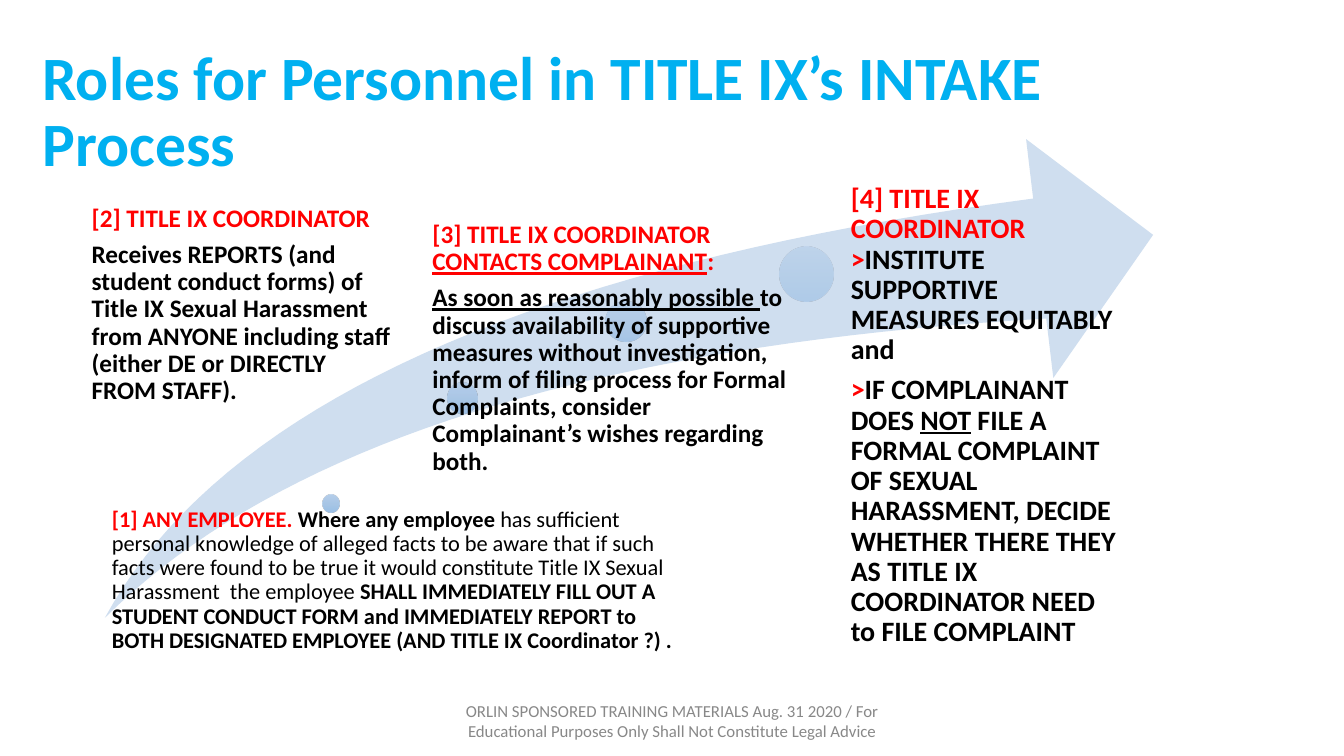
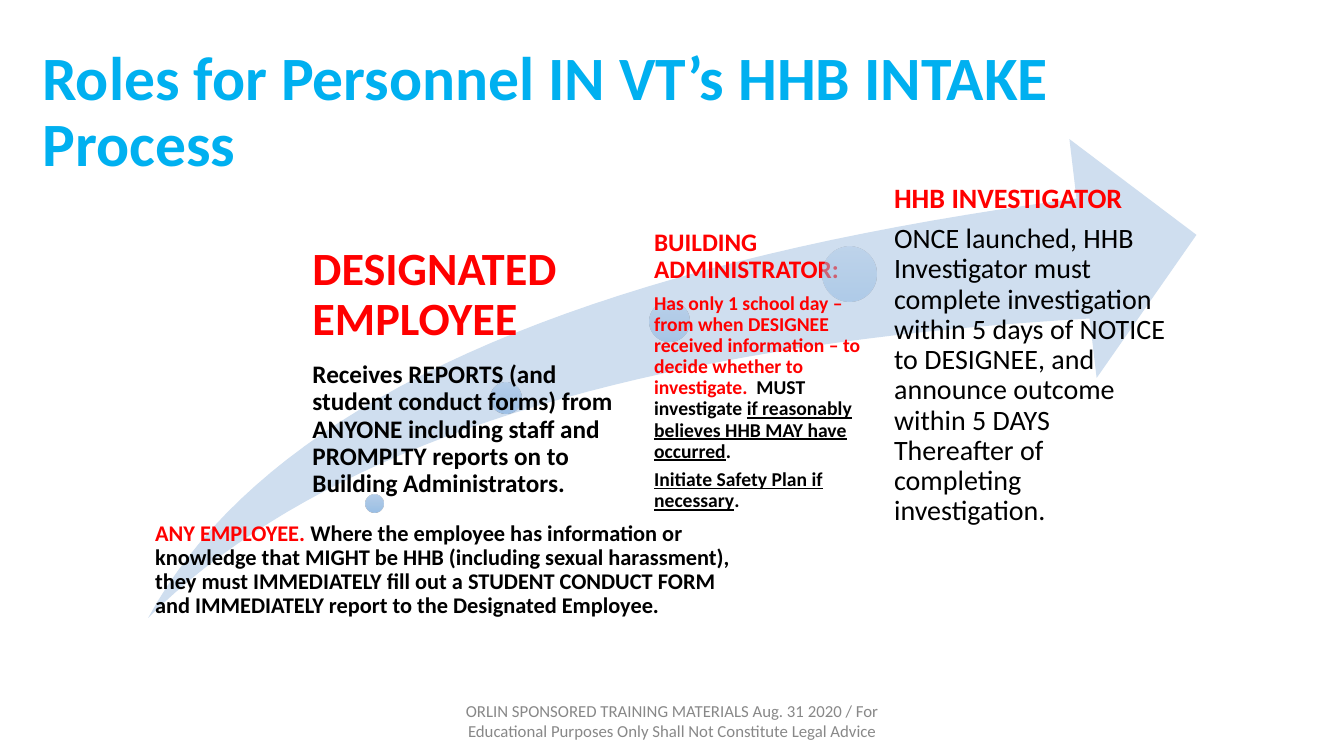
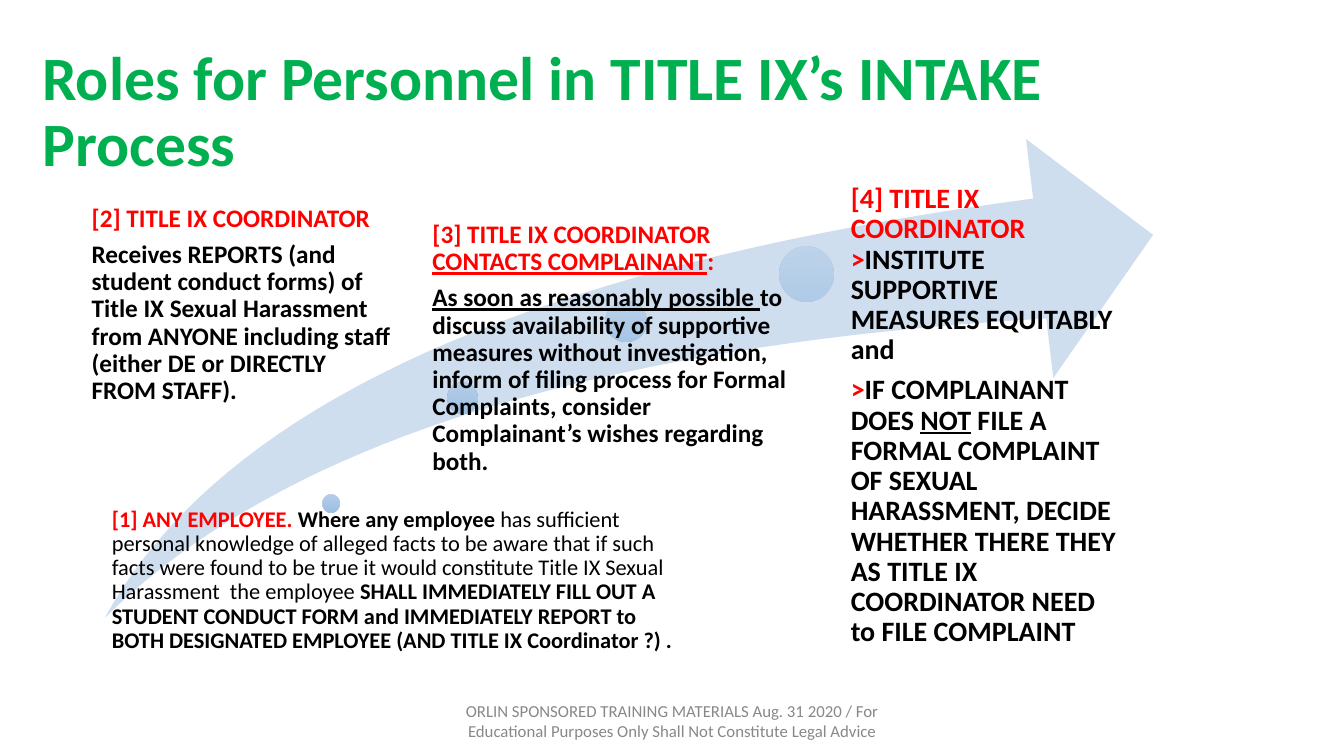
from lxml.etree import SubElement
from pptx import Presentation
from pptx.dml.color import RGBColor
from pptx.enum.shapes import MSO_SHAPE
from pptx.enum.text import MSO_ANCHOR, MSO_AUTO_SIZE, PP_ALIGN
from pptx.oxml.ns import qn
from pptx.util import Pt

PX = 9144  # EMU per px, 100 px to the inch
FONT = "Calibri"
COLORS = {"blue": "00B0F0", "green": "00B050", "red": "FF0000", "black": "000000",
          "grey": "888888", "arrow": "CFDEEF"}
DOT_STOPS = [(0, "AFCAE9"), (50, "A0C1E4"), (100, "8FB8E4")]

# Shared parts
TITLE_BOX = (32, 40, 1209, 145)
FOOTER_BOX = (442, 695, 450, 40)
FOOTER = ("ORLIN SPONSORED TRAINING MATERIALS Aug. 31 2020 / For Educational Purposes Only "
          "Shall Not Constitute Legal Advice")
DOTS = [(320, 491, 17, 90), (444, 380, 30, 77), (601, 299, 40, 63), (773, 245, 54, 50)]
INSETS = [9, 16, 21, 29]
TAIL = (104, 613)
UPPER_EDGE = (TAIL, (219, 402), (526, 263), (1025, 197))
HEAD = [(1018, 138), (1144, 233), (1045, 375), (1038, 316)]
LOWER_EDGE = (HEAD[-1], (588, 342), (277, 441), TAIL)

# Callouts: box, then paragraphs of (size, runs); run styles: r = red, b = bold, u = underlined
TITLE_IX = [
    ((102, 504, 584, 104), [
        (16, [("[1] ANY EMPLOYEE. ", "rb"), ("Where any employee ", "b"),
              ("has sufficient personal knowledge of alleged facts to be aware that if such facts "
               "were found to be true it would constitute Title IX Sexual Harassment  the employee ", ""),
              ("SHALL IMMEDIATELY FILL OUT A STUDENT CONDUCT FORM and IMMEDIATELY REPORT to BOTH "
               "DESIGNATED EMPLOYEE (AND TITLE IX Coordinator ?) .", "b")])]),
    ((75, 204, 316, 218), [
        (18, [("[2] TITLE IX COORDINATOR", "rb")]),
        (18, [("Receives REPORTS (and student conduct forms) of Title IX Sexual Harassment from "
               "ANYONE including staff (either DE or DIRECTLY FROM STAFF).", "b")])]),
    ((408, 220, 380, 475), [
        (18, [("[3] TITLE IX COORDINATOR ", "rb"), ("CONTACTS COMPLAINANT", "rbu"), (":", "rb")]),
        (18, [("As soon as reasonably possible ", "bu"),
              ("to discuss availability of supportive measures without investigation, inform of "
               "filing process for Formal Complaints, consider Complainant’s wishes regarding both.",
               "b")])]),
    ((815, 183, 301, 341), [
        (20, [("[4] TITLE IX COORDINATOR >", "rb"),
              ("INSTITUTE SUPPORTIVE MEASURES EQUITABLY and", "b")]),
        (20, [(">", "rb"), ("IF COMPLAINANT DOES ", "b"), ("NOT", "bu"),
              (" FILE A FORMAL COMPLAINT OF SEXUAL HARASSMENT, DECIDE WHETHER THERE THEY AS "
               "TITLE IX COORDINATOR NEED to FILE COMPLAINT", "b")])]),
]
HHB = [
    ((145, 518, 584, 76), [
        (16, [("ANY EMPLOYEE. ", "rb"),
              ("Where the employee has information or knowledge that MIGHT be HHB (including sexual "
               "harassment), they must IMMEDIATELY fill out a STUDENT CONDUCT FORM and IMMEDIATELY "
               "report to the Designated Employee.", "b")])]),
    ((294, 244, 339, 177), [
        (33, [("DESIGNATED EMPLOYEE", "rb")]),
        (18, [("Receives REPORTS (and student conduct forms) from ANYONE including staff and "
               "PROMPLTY reports on to Building Administrators.", "b")])]),
    ((628, 228, 233, 475), [
        (18, [("BUILDING ADMINISTRATOR:", "rb")]),
        (14, [("Has only 1 school day – from when DESIGNEE received information – to decide "
               "whether to investigate.  ", "rb"), ("MUST investigate ", "b"),
              ("if reasonably believes HHB MAY have occurred", "bu"), (".", "b")]),
        (14, [("Initiate Safety Plan if necessary", "bu"), (".", "b")])]),
    ((858, 183, 301, 341), [
        (20, [("HHB INVESTIGATOR", "rb")]),
        (20, [("ONCE launched, HHB Investigator must complete investigation within 5 days of NOTICE "
               "to DESIGNEE, and announce outcome within 5 DAYS Thereafter of completing "
               "investigation.", "")])]),
]
TITLE_IX_TITLE = "Roles for Personnel in TITLE IX’s INTAKE Process"
# Title, title colour, arrow shift to the right, callouts
SLIDES = [
    (TITLE_IX_TITLE, "blue", 0, TITLE_IX),
    ("Roles for Personnel IN VT’s HHB INTAKE Process", "blue", 43, HHB),
    (TITLE_IX_TITLE, "green", 0, TITLE_IX),
]


def emu(*lengths):
    return [round(v * PX) for v in lengths]


def add_run(p, text, size, color, bold=False, underline=False):
    r = p.add_run()
    r.text = text
    fmt = {"name": FONT, "size": Pt(size), "bold": bold, "underline": underline}
    for name, value in fmt.items():
        setattr(r.font, name, value)
    r.font.color.rgb = RGBColor.from_string(COLORS[color])


def set_frame(tf, **fmt):
    fmt = {"word_wrap": True, "auto_size": MSO_AUTO_SIZE.NONE, **fmt}
    for name, value in fmt.items():
        setattr(tf, name, value)


def add_title(s, text, color):
    sp = s.shapes.title
    sp.left, sp.top, sp.width, sp.height = emu(*TITLE_BOX)
    set_frame(sp.text_frame, vertical_anchor=MSO_ANCHOR.MIDDLE)
    p = sp.text_frame.paragraphs[0]
    p.alignment, p.line_spacing = PP_ALIGN.LEFT, 0.9
    add_run(p, text, 44, color, bold=True)


def add_footer(s):
    tf = s.shapes.add_textbox(*emu(*FOOTER_BOX)).text_frame
    set_frame(tf, vertical_anchor=MSO_ANCHOR.MIDDLE)
    p = tf.paragraphs[0]
    p.alignment = PP_ALIGN.CENTER
    add_run(p, FOOTER, 12, "grey")


def curve(points, steps=40):
    """Points along a cubic curve, without its start."""
    for i in range(1, steps + 1):
        t = i / steps
        weights = ((1 - t) ** 3, 3 * t * (1 - t) ** 2, 3 * t * t * (1 - t), t ** 3)
        yield tuple(sum(w * pt[axis] for w, pt in zip(weights, points)) for axis in (0, 1))


def add_arrow(s, shift):
    outline = [*curve(UPPER_EDGE), *HEAD, *curve(LOWER_EDGE)]
    builder = s.shapes.build_freeform(*emu(TAIL[0] + shift, TAIL[1]), scale=1.0)
    builder.add_line_segments([emu(x + shift, y) for x, y in outline], close=True)
    sp = builder.convert_to_shape()
    sp.shadow.inherit = False
    sp.fill.solid()
    sp.fill.fore_color.rgb = RGBColor.from_string(COLORS["arrow"])
    sp.line.fill.background()


def add_dot(s, x, y, size, opacity):
    sp = s.shapes.add_shape(MSO_SHAPE.OVAL, *emu(x, y, size, size))
    sp.shadow.inherit = False
    sp.line.fill.background()
    # Three translucent stops, running downwards
    sp.fill.gradient()
    grad = sp.fill._xPr.find(qn("a:gradFill"))
    for child in list(grad):
        grad.remove(child)
    stops = SubElement(grad, qn("a:gsLst"))
    for pos, color in DOT_STOPS:
        stop = SubElement(stops, qn("a:gs"), pos=str(pos * 1000))
        clr = SubElement(stop, qn("a:srgbClr"), val=color)
        SubElement(clr, qn("a:alpha"), val=str(opacity * 1000))
    SubElement(grad, qn("a:lin"), ang="5400000", scaled="0")


def add_callout(s, box, inset, paragraphs):
    tf = s.shapes.add_textbox(*emu(*box)).text_frame
    set_frame(tf, margin_left=inset * PX, margin_top=0, margin_right=0, margin_bottom=0)
    previous = 0
    for i, (size, runs) in enumerate(paragraphs):
        p = tf.add_paragraph() if i else tf.paragraphs[0]
        p.line_spacing = 0.9
        p.space_before = Pt(0.35 * previous)  # follows the size of the paragraph above
        for text, style in runs:
            add_run(p, text, size, "red" if "r" in style else "black", "b" in style, "u" in style)
        previous = size


def main():
    prs = Presentation()
    prs.slide_width, prs.slide_height = emu(1333.33, 750)
    for title, color, shift, callouts in SLIDES:
        s = prs.slides.add_slide(prs.slide_layouts[5])
        add_title(s, title, color)
        add_arrow(s, shift)
        for (x, y, size, opacity), inset, (box, paragraphs) in zip(DOTS, INSETS, callouts):
            add_dot(s, x + shift, y, size, opacity)
            add_callout(s, box, inset, paragraphs)
        add_footer(s)
    prs.save("out.pptx")


if __name__ == "__main__":
    main()
